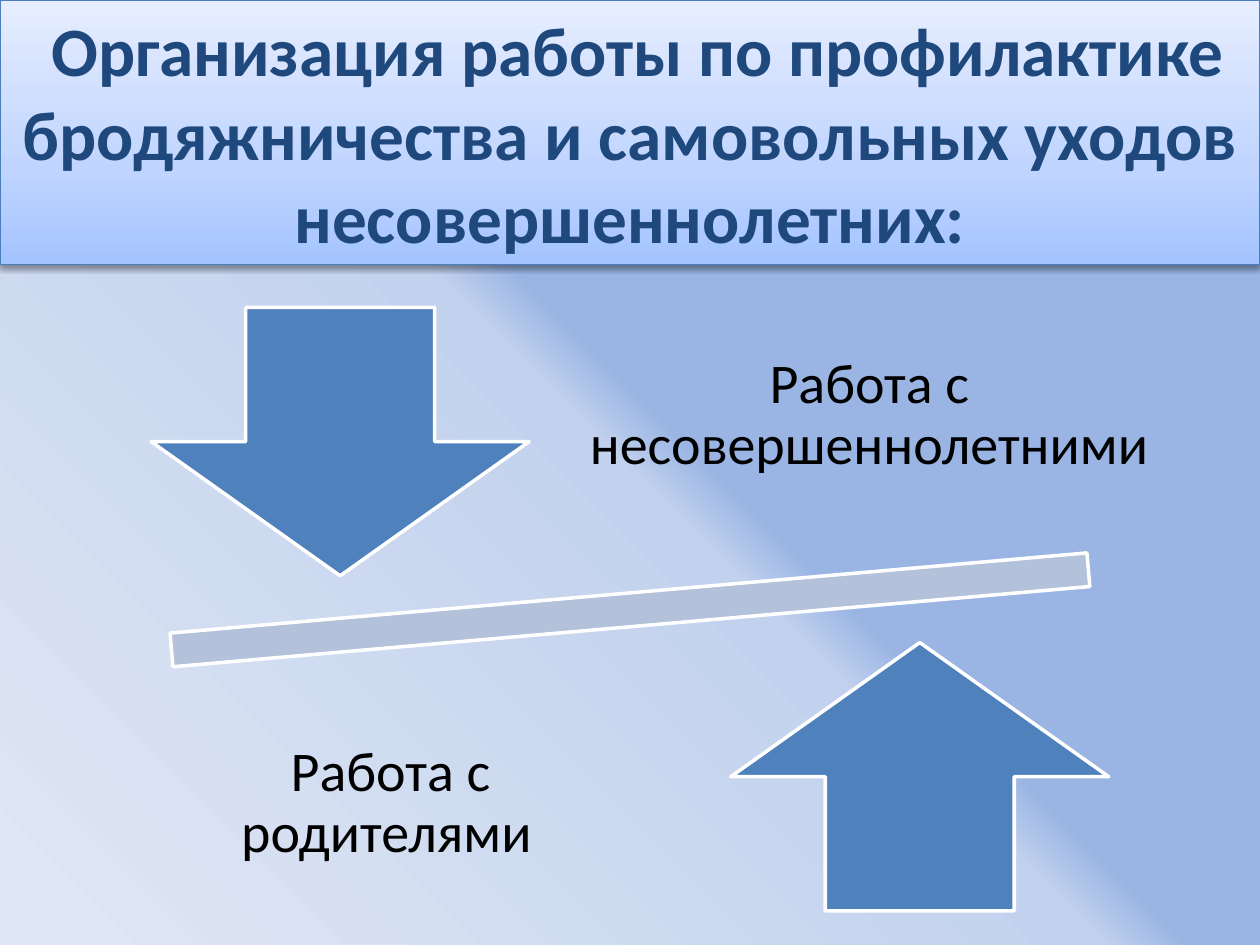
from lxml import etree
from pptx import Presentation
from pptx.dml.color import RGBColor
from pptx.enum.shapes import MSO_SHAPE
from pptx.enum.text import MSO_ANCHOR, PP_ALIGN
from pptx.oxml.ns import qn
from pptx.util import Inches, Pt

DOWN_ARROW, UP_ARROW = MSO_SHAPE.DOWN_ARROW, MSO_SHAPE.UP_ARROW
BAR = MSO_SHAPE.MATH_MINUS
MIDDLE, CENTER = MSO_ANCHOR.MIDDLE, PP_ALIGN.CENTER

FONT = "Calibri"
COLORS = {
    "text": "000000", "title": "1F497D", "title_line": "4B7EBC",
    "arrow": "4F81BD", "bar": "B3C1DB", "outline": "FFFFFF",
}
BACKGROUND_STOPS = [(46, "9AB5E4"), (50, "C2D1ED"), (100, "E1E8F5")]
TITLE_STOPS = [(0, "A4C4FF"), (35, "BFD4FF"), (100, "E6EEFF")]


def rgb(name):
    return RGBColor.from_string(COLORS[name])


def place(shape, left, top, width, height):
    shape.left, shape.top = Inches(left), Inches(top)
    shape.width, shape.height = Inches(width), Inches(height)


def set_gradient(fill, owner, stops, angle):
    """Fill with (percent, colour) stops; the angle runs clockwise in degrees."""
    fill.gradient()
    gradient = owner.find(".//" + qn("a:gradFill"))
    stop_list = gradient.find(qn("a:gsLst"))
    for stop in list(stop_list):
        stop_list.remove(stop)
    for percent, color in stops:
        stop = etree.SubElement(stop_list, qn("a:gs"), pos=str(percent * 1000))
        etree.SubElement(stop, qn("a:srgbClr"), val=color)
    gradient.find(qn("a:lin")).set("ang", str(angle * 60000))


def add_soft_shadow(shape):
    shape.shadow.inherit = False
    effects = shape.element.spPr.find(qn("a:effectLst"))
    shadow = etree.SubElement(
        effects, qn("a:outerShdw"), blurRad=str(Pt(3.1)), dist=str(Pt(1.6)),
        dir=str(90 * 60000), rotWithShape="0")
    color = etree.SubElement(shadow, qn("a:srgbClr"), val=COLORS["text"])
    etree.SubElement(color, qn("a:alpha"), val="38000")


def add_run(paragraph, text, size, color="text", bold=False):
    run = paragraph.add_run()
    run.text = text
    run.font.name, run.font.size, run.font.bold = FONT, Pt(size), bold
    run.font.color.rgb = rgb(color)


def format_title(title):
    place(title, 0, 0, 10, 2.1)
    set_gradient(title.fill, title.element, TITLE_STOPS, 270)
    title.line.color.rgb = rgb("title_line")
    title.line.width = Pt(0.75)
    add_soft_shadow(title)
    title.text_frame.vertical_anchor = MIDDLE
    paragraph = title.text_frame.paragraphs[0]
    paragraph.alignment = CENTER
    add_run(paragraph, " ", 39.6)
    add_run(paragraph, "Организация работы по профилактике бродяжничества "
            "и самовольных уходов несовершеннолетних:", 39.6, "title", True)


def add_figure(group, kind, box, color, rotation=0):
    figure = group.shapes.add_shape(kind, *map(Inches, box))
    figure.rotation = rotation
    figure.shadow.inherit = False
    figure.fill.solid()
    figure.fill.fore_color.rgb = rgb(color)
    figure.line.color.rgb = rgb("outline")
    figure.line.width = Pt(2)


def add_label(group, box, runs):
    frame = group.shapes.add_textbox(*map(Inches, box)).text_frame
    frame.word_wrap = True
    frame.vertical_anchor = MIDDLE
    frame.margin_left = frame.margin_right = Inches(0.25)
    frame.margin_top = frame.margin_bottom = Inches(0.25)
    paragraph = frame.paragraphs[0]
    paragraph.alignment = CENTER
    paragraph.line_spacing = 0.9
    for text, size in runs:
        add_run(paragraph, text, size)


def main():
    deck = Presentation()
    deck.slide_width, deck.slide_height = Inches(10), Inches(7.5)
    slide = deck.slides.add_slide(deck.slide_layouts[5])
    set_gradient(slide.background.fill, slide.element, BACKGROUND_STOPS, 135)
    format_title(slide.shapes.title)

    balance = slide.shapes.add_group_shape()
    add_figure(balance, BAR, (0.03, 4.27, 9.94, 1.14), "bar", 355)
    add_figure(balance, DOWN_ARROW, (1.2, 2.44, 3, 2.13), "arrow")
    add_label(balance, (4.29, 2.18, 5.22, 2.24),
              [("Работа с несовершеннолетними", 32)])
    add_figure(balance, UP_ARROW, (5.8, 5.1, 3, 2.13), "arrow")
    add_label(balance, (1.5, 5.26, 3.2, 2.24),
              [("Работа с родителями", 32), (" ", 20)])
    deck.save("out.pptx")


if __name__ == "__main__":
    main()
